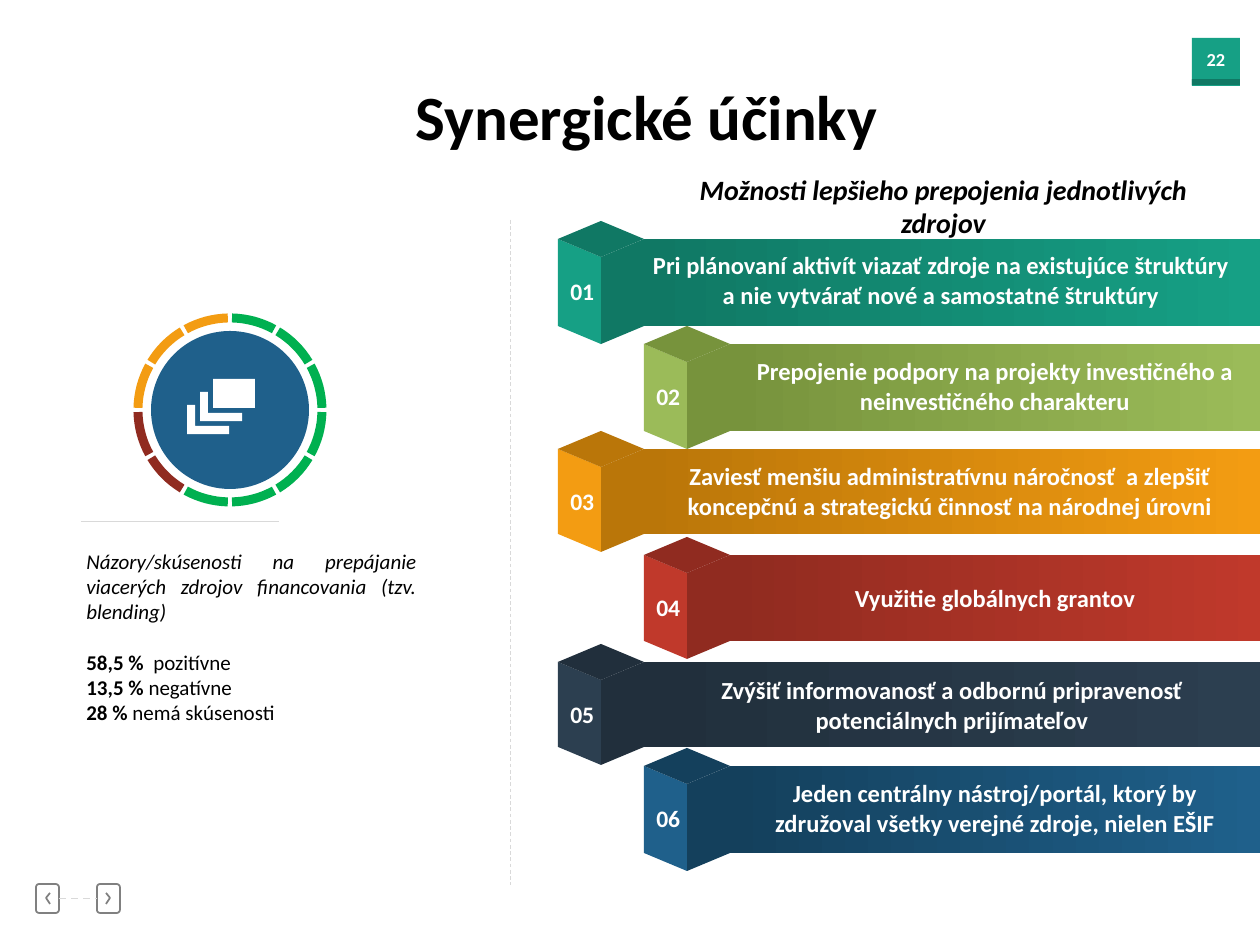
from math import cos, radians, sin

from lxml import etree
from pptx import Presentation
from pptx.dml.color import RGBColor
from pptx.enum.dml import MSO_LINE
from pptx.enum.shapes import MSO_CONNECTOR, MSO_SHAPE
from pptx.enum.text import MSO_ANCHOR, PP_ALIGN
from pptx.oxml.ns import qn
from pptx.util import Inches, Pt

RECT, OVAL, ROUNDED = MSO_SHAPE.RECTANGLE, MSO_SHAPE.OVAL, MSO_SHAPE.ROUNDED_RECTANGLE
STRAIGHT, DASH = MSO_CONNECTOR.STRAIGHT, MSO_LINE.DASH
LEFT, CENTER, JUSTIFY = PP_ALIGN.LEFT, PP_ALIGN.CENTER, PP_ALIGN.JUSTIFY
MIDDLE = MSO_ANCHOR.MIDDLE

PX = 7257
WHITE = RGBColor(0xFF, 0xFF, 0xFF)
BLACK = RGBColor(0x00, 0x00, 0x00)
GRAY = RGBColor(0x80, 0x80, 0x80)
LIGHT_GRAY = RGBColor(0xD9, 0xD9, 0xD9)
TEAL, DARK_TEAL = RGBColor(0x16, 0xA0, 0x85), RGBColor(0x10, 0x78, 0x64)
LIME, DARK_LIME = RGBColor(0x9B, 0xBB, 0x59), RGBColor(0x77, 0x93, 0x3C)
ORANGE, DARK_ORANGE = RGBColor(0xF3, 0x9C, 0x12), RGBColor(0xBA, 0x76, 0x09)
RED, DARK_RED = RGBColor(0xC0, 0x39, 0x2B), RGBColor(0x90, 0x2B, 0x20)
SLATE, DARK_SLATE = RGBColor(0x2C, 0x3F, 0x50), RGBColor(0x21, 0x2F, 0x3C)
BLUE, DARK_BLUE = RGBColor(0x1F, 0x60, 0x8B), RGBColor(0x14, 0x40, 0x5C)
GREEN = RGBColor(0x00, 0xB0, 0x50)

prs = Presentation()
prs.slide_width, prs.slide_height = Inches(10), Inches(7.5)
s = prs.slides.add_slide(prs.slide_layouts[6])


def put_text(sp, paragraphs, size, color, align=CENTER, wrap=True):
    tf = sp.text_frame
    tf.word_wrap = wrap
    for i, runs in enumerate(paragraphs):
        p = tf.paragraphs[0] if i == 0 else tf.add_paragraph()
        p.alignment = align
        for text, fmt in runs:
            r = p.add_run()
            r.text = text
            for key, value in {"name": "Calibri", "size": Pt(size), **fmt}.items():
                setattr(r.font, key, value)
            r.font.color.rgb = color
    return tf


def polygon(points, fill, closed=True):
    points = [(x * PX, y * PX) for x, y in points]
    fb = s.shapes.build_freeform(*points[0], scale=1.0)
    fb.add_line_segments(points[1:], close=closed)
    sp = fb.convert_to_shape()
    sp.shadow.inherit = False
    if closed:
        sp.fill.solid()
        sp.fill.fore_color.rgb = fill
        sp.line.fill.background()
    else:
        sp.fill.background()
        sp.line.color.rgb = fill
        sp.line.width = Pt(1)


BOLD, PLAIN, ITALIC = {"bold": True}, {"bold": False}, {"italic": True}

for kind, box, color in [
    (RECT, (1192, 38, 48, 48), TEAL),
    (RECT, (1192, 79, 48, 6), DARK_TEAL),
    (OVAL, (151, 331, 158, 158), BLUE),
    (RECT, (213, 379, 42, 29), WHITE),
]:
    sp = s.shapes.add_shape(kind, *(v * PX for v in box))
    sp.shadow.inherit = False
    sp.fill.solid()
    sp.fill.fore_color.rgb = color
    sp.line.fill.background()

for x, y in [(200, 392), (187, 405)]:
    polygon([(x, y), (x + 8, y), (x + 8, y + 21), (x + 42, y + 21),
             (x + 42, y + 29), (x, y + 29)], WHITE)

ring_colors = [GREEN] * 7 + [DARK_RED] * 2 + [ORANGE] * 3
for i, color in enumerate(ring_colors):
    angles = [radians(i * 30 - 88.7 + 27.4 * k / 8) for k in range(9)]
    outer = [(230 + 96.5 * cos(a), 410 + 96.5 * sin(a)) for a in angles]
    inner = [(230 + 87.5 * cos(a), 410 + 87.5 * sin(a)) for a in reversed(angles)]
    polygon(outer + inner, color)

buttons = []
for x, tip, tail in [(36, 46, 50), (97, 110, 106)]:
    sp = s.shapes.add_shape(ROUNDED, x * PX, 884 * PX, 23 * PX, 29 * PX)
    sp.shadow.inherit = False
    sp.adjustments[0] = 0.14
    sp.fill.background()
    sp.line.color.rgb = GRAY
    sp.line.width = Pt(1)
    buttons.append(sp)
    polygon([(tail, 893), (tip, 898), (tail, 904)], GRAY, closed=False)

lines = []
for ends, width, dash in [
    ((59, 898, 97, 898), 1, DASH),
    ((81, 521, 279, 521), 0.5, None),
    ((510, 220, 510, 885), 0.5, DASH),
]:
    c = s.shapes.add_connector(STRAIGHT, *(v * PX for v in ends))
    c.line.color.rgb = LIGHT_GRAY
    c.line.width = Pt(width)
    c.line.dash_style = dash
    etree.SubElement(c._element.spPr, qn("a:effectLst"))
    lines.append(c)
lines[0].begin_connect(buttons[0], 3)
lines[0].end_connect(buttons[1], 1)

for box, text, size, color, fmt, wrap in [
    ((1192, 42, 48, 35), "22", 10.5, WHITE, BOLD, False),
    ((401, 71, 491, 89), "Synergické účinky", 36, BLACK, BOLD, False),
    ((645, 166, 597, 47), "Možnosti lepšieho prepojenia jednotlivých zdrojov",
     16, BLACK, {**BOLD, **ITALIC}, True),
]:
    sp = s.shapes.add_textbox(*(v * PX for v in box))
    put_text(sp, [[(text, fmt)]], size, color, wrap=wrap)

survey = [
    [("Názory/skúsenosti na prepájanie viacerých zdrojov financovania (tzv. blending)", ITALIC)],
    [("58,5 %  ", BOLD), ("pozitívne", PLAIN)],
    [("13,5 % ", BOLD), ("negatívne", PLAIN)],
    [("28 % ", BOLD), ("nemá skúsenosti", PLAIN)],
]
sp = s.shapes.add_textbox(74 * PX, 542 * PX, 355 * PX, 212 * PX)
tf = put_text(sp, survey, 12, BLACK, JUSTIFY)
tf.paragraphs[0].space_after = Pt(14.6)

rows = [
    (239, 87, DARK_TEAL, TEAL, (640, 244, 602, 72),
     "Pri plánovaní aktivít viazať zdroje na existujúce štruktúry a nie vytvárať nové a samostatné štruktúry"),
    (344, 87, DARK_LIME, LIME, (730, 350, 530, 72),
     "Prepojenie podpory na projekty investičného a neinvestičného charakteru"),
    (449, 85, DARK_ORANGE, ORANGE, (640, 455, 620, 72),
     "Zaviesť menšiu administratívnu náročnosť  a zlepšiť koncepčnú a strategickú činnosť na národnej úrovni"),
    (555, 86, DARK_RED, RED, (730, 577, 530, 43), "Využitie globálnych grantov"),
    (662, 85, DARK_SLATE, SLATE, None,
     "Zvýšiť informovanosť a odbornú pripravenosť potenciálnych prijímateľov"),
    (766, 87, DARK_BLUE, BLUE, (730, 772, 530, 72),
     "Jeden centrálny nástroj/portál, ktorý by združoval všetky verejné zdroje, nielen EŠIF"),
]
for i, (y, h, dark, light, box, text) in enumerate(rows):
    x = 558 + 86 * (i % 2)
    mid, right = x + 43, x + 86
    bar = s.shapes.add_shape(RECT, right * PX, y * PX, (1260 - right) * PX, h * PX)
    bar.shadow.inherit = False
    bar.line.fill.background()
    bar.fill.gradient()
    bar.fill.gradient_angle = 0
    for stop, color in zip(bar.fill.gradient_stops, (dark, light)):
        stop.color.rgb = color
    bar.text_frame.vertical_anchor = MIDDLE
    label = s.shapes.add_textbox(*(v * PX for v in box)) if box else bar
    put_text(label, [[(text, BOLD)]], 14, WHITE)

    for side, color in [(right, dark), (x, light)]:
        polygon([(mid, y + h + 18), (side, y + h), (side, y), (mid, y + 18)], color)
    polygon([(mid, y + 18), (x, y), (mid, y - 18), (right, y)], dark)
    number = s.shapes.add_textbox(x * PX, (y + 32) * PX, 49 * PX, 42 * PX)
    put_text(number, [[(f"{i + 1:02d}", BOLD)]], 13.5, WHITE, LEFT, False)

prs.save("out.pptx")
